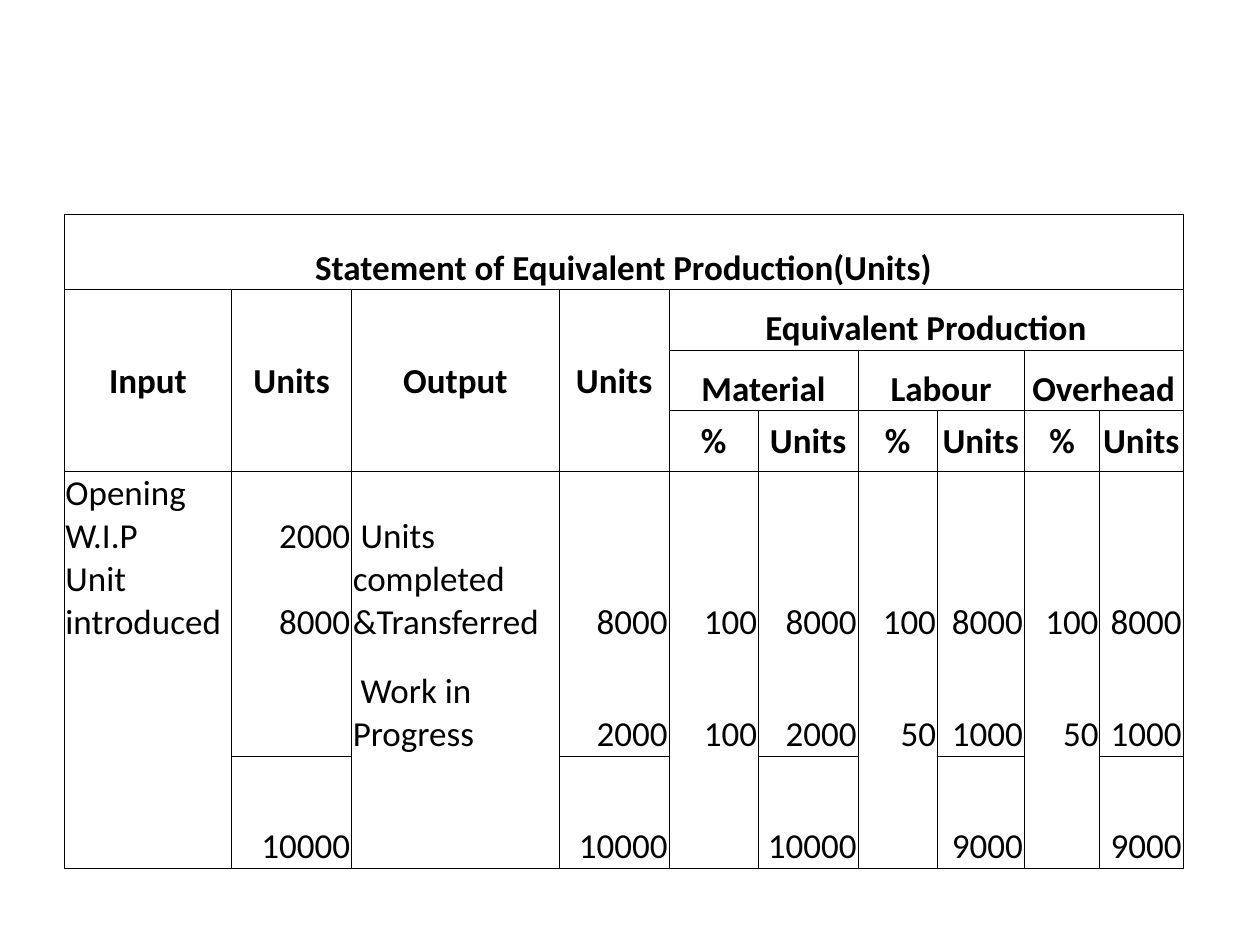
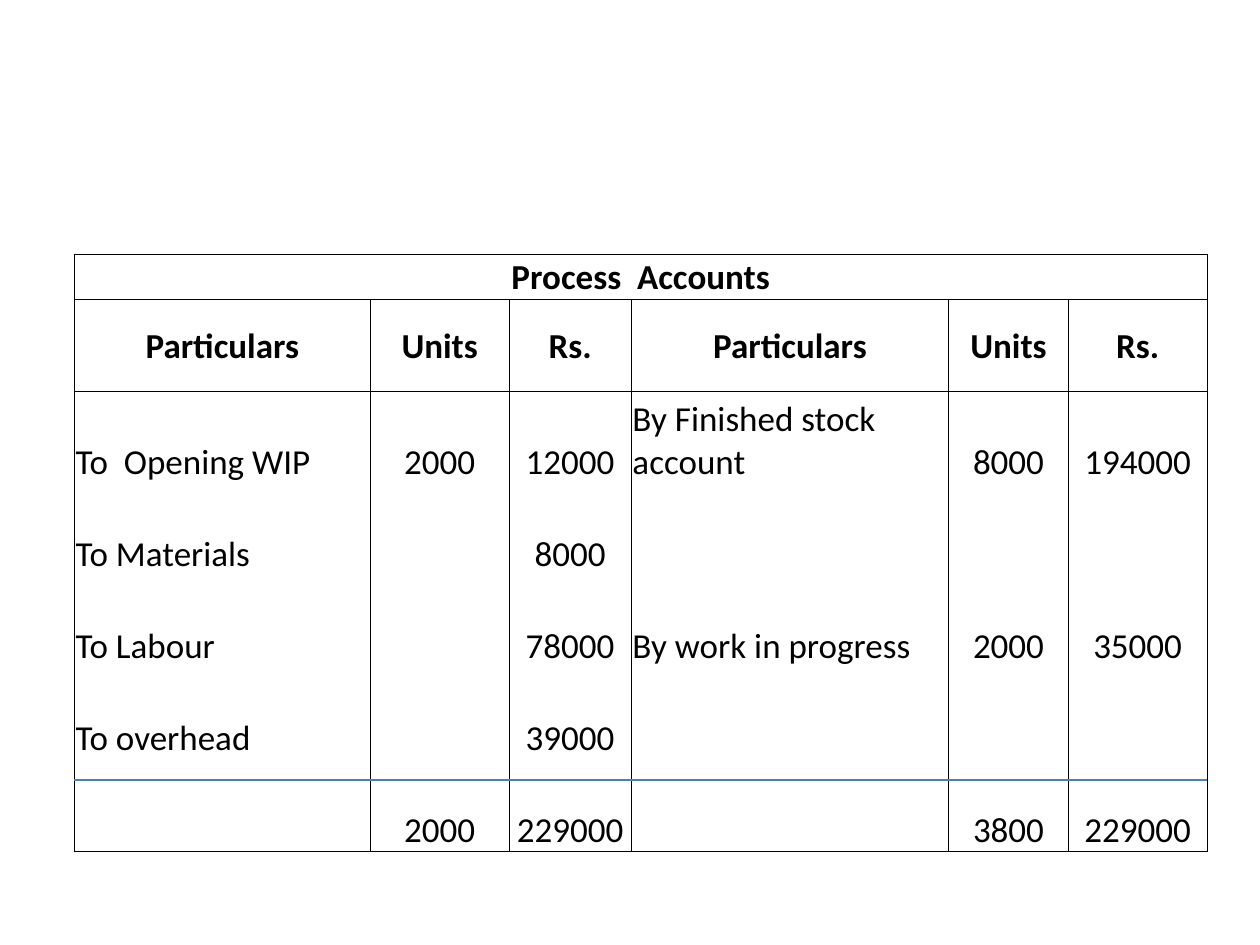
from dataclasses import dataclass

from lxml.etree import SubElement
from pptx import Presentation
from pptx.dml.color import RGBColor
from pptx.enum.shapes import MSO_CONNECTOR
from pptx.enum.text import MSO_ANCHOR, PP_ALIGN
from pptx.oxml.ns import qn
from pptx.util import Inches, Pt


@dataclass(frozen=True)
class Theme:
    font: str = "Calibri"
    size: float = 20
    ink: str = "000000"
    accent: str = "4B7EBC"
    border: float = 0.5
    rule: float = 0.75
    gap: float = 24.4  # one line of body text


THEME = Theme()

# "spans" maps (row, column) to (rows, columns); "low" lists the header
# cells set at the bottom; "sums" are columns ruled off above the total.
OUTPUT = {
    "at": (0.51, 1.7),
    "cols": [1.33, 0.95, 1.65, 0.87, 0.71, 0.79, 0.63, 0.69, 0.6, 0.66],
    "rows": [0.6] + [0.48] * 3 + [0.89] * 3,
    "head": 4,
    "names": {0, 2},
    "align": PP_ALIGN.RIGHT,
    "sums": {1, 3, 5, 7, 9},
    "low": {(0, 0), (1, 4), (2, 4), (2, 6), (2, 8)},
    "spans": {
        (0, 0): (1, 10), (1, 4): (1, 6),
        **{(1, col): (3, 1) for col in range(4)},
        **{(2, col): (1, 2) for col in (4, 6, 8)},
    },
    "cells": [
        ["Statement of Equivalent Production(Units)"],
        ["Input", "Units", "Output", "Units", "Equivalent Production"],
        ["", "", "", "", "Material", "", "Labour", "", "Overhead"],
        ["", "", "", "", "%", "Units", "%", "Units", "%", "Units"],
        ["Opening W.I.P\nUnit introduced", "2000\n8000",
         " Units completed &Transferred", "8000",
         "100", "8000", "100", "8000", "100", "8000"],
        ["", "", " Work in Progress", "2000",
         "100", "2000", "50", "1000", "50", "1000"],
        ["", "10000", "", "10000", "", "10000", "", "9000", "", "9000"],
    ],
}

ACCOUNT = {
    "at": (0.59, 2.02),
    "cols": [2.35, 1.1, 0.97, 2.52, 0.95, 1.1],
    "rows": [0.36] + [0.73] * 6,
    "head": 2,
    "names": {0, 3},
    "align": PP_ALIGN.CENTER,
    "sums": set(),
    "low": set(),
    "spans": {(0, 0): (1, 6)},
    "cells": [
        ["Process  Accounts"],
        ["Particulars", "Units", "Rs."] * 2,
        ["To  Opening WIP", "2000", "12000",
         "By Finished stock account", "8000", "194000"],
        ["To Materials", "", "8000"],
        ["To Labour", "", "78000", "By work in progress", "2000", "35000"],
        ["To overhead", "", "39000"],
        ["", "2000", "229000", "", "3800", "229000"],
    ],
}
TOTAL_Y = 6.19


def set_edges(cell, sides):
    """Draw the borders named in sides and clear the others."""
    props = cell._tc.get_or_add_tcPr()
    for index, side in enumerate("LRTB"):
        line = props.makeelement(qn(f"a:ln{side}"), {"w": str(Pt(THEME.border))})
        props.insert(index, line)
        if side in sides:
            fill = SubElement(line, qn("a:solidFill"))
            SubElement(fill, qn("a:srgbClr"), val=THEME.ink)
        else:
            SubElement(line, qn("a:noFill"))


def write(cell, text, align, bold, gap):
    cell.text = text
    cell.margin_left = cell.margin_right = cell.margin_top = Inches(0.01)
    cell.margin_bottom = 0
    for index, para in enumerate(cell.text_frame.paragraphs):
        para.alignment = align
        if index:
            para.space_before = Pt(gap)
        font = para.font
        font.name, font.size, font.bold = THEME.font, Pt(THEME.size), bold
        font.color.rgb = RGBColor.from_string(THEME.ink)


def find_sides(data, row, col):
    head, last = data["head"], len(data["rows"]) - 1
    if row < head:
        return "LRTB"
    summed = col in data["sums"]
    top = row == head or (row == last and summed)
    base = row == last or (row == last - 1 and summed)
    return "LR" + "T" * top + "B" * base


def add_grid(slide, data):
    rows, cols = data["rows"], data["cols"]
    left, top = data["at"]
    frame = slide.shapes.add_table(
        len(rows), len(cols), Inches(left), Inches(top),
        Inches(sum(cols)), Inches(sum(rows)))
    table = frame.table
    table.first_row = table.horz_banding = False
    for col, width in enumerate(cols):
        table.columns[col].width = Inches(width)
    for row, height in enumerate(rows):
        table.rows[row].height = Inches(height)
        texts = data["cells"][row]
        for col in range(len(cols)):
            cell = table.cell(row, col)
            head = row < data["head"]
            name = col in data["names"]
            align = data["align"]
            if head:
                align = PP_ALIGN.CENTER
            elif name:
                align = PP_ALIGN.LEFT
            text = texts[col] if col < len(texts) else ""
            write(cell, text, align, head, 0 if name else THEME.gap)
            low = not head or (row, col) in data["low"]
            cell.vertical_anchor = MSO_ANCHOR.BOTTOM if low else MSO_ANCHOR.MIDDLE
            cell.fill.background()
            set_edges(cell, find_sides(data, row, col))
    for (row, col), (down, across) in data["spans"].items():
        table.cell(row, col).merge(table.cell(row + down - 1, col + across - 1))


def add_rule(slide, left, width, y):
    rule = slide.shapes.add_connector(
        MSO_CONNECTOR.STRAIGHT, Inches(left), Inches(y),
        Inches(left + width), Inches(y))
    rule.line.color.rgb = RGBColor.from_string(THEME.accent)
    rule.line.width = Pt(THEME.rule)
    SubElement(rule._element.spPr, qn("a:effectLst"))


def main():
    deck = Presentation()
    deck.slide_width, deck.slide_height = Inches(10), Inches(7.5)
    blank = deck.slide_layouts[6]
    for data in (OUTPUT, ACCOUNT):
        slide = deck.slides.add_slide(blank)
        add_grid(slide, data)
    add_rule(slide, ACCOUNT["at"][0], sum(ACCOUNT["cols"]), TOTAL_Y)
    deck.save("out.pptx")


if __name__ == "__main__":
    main()
